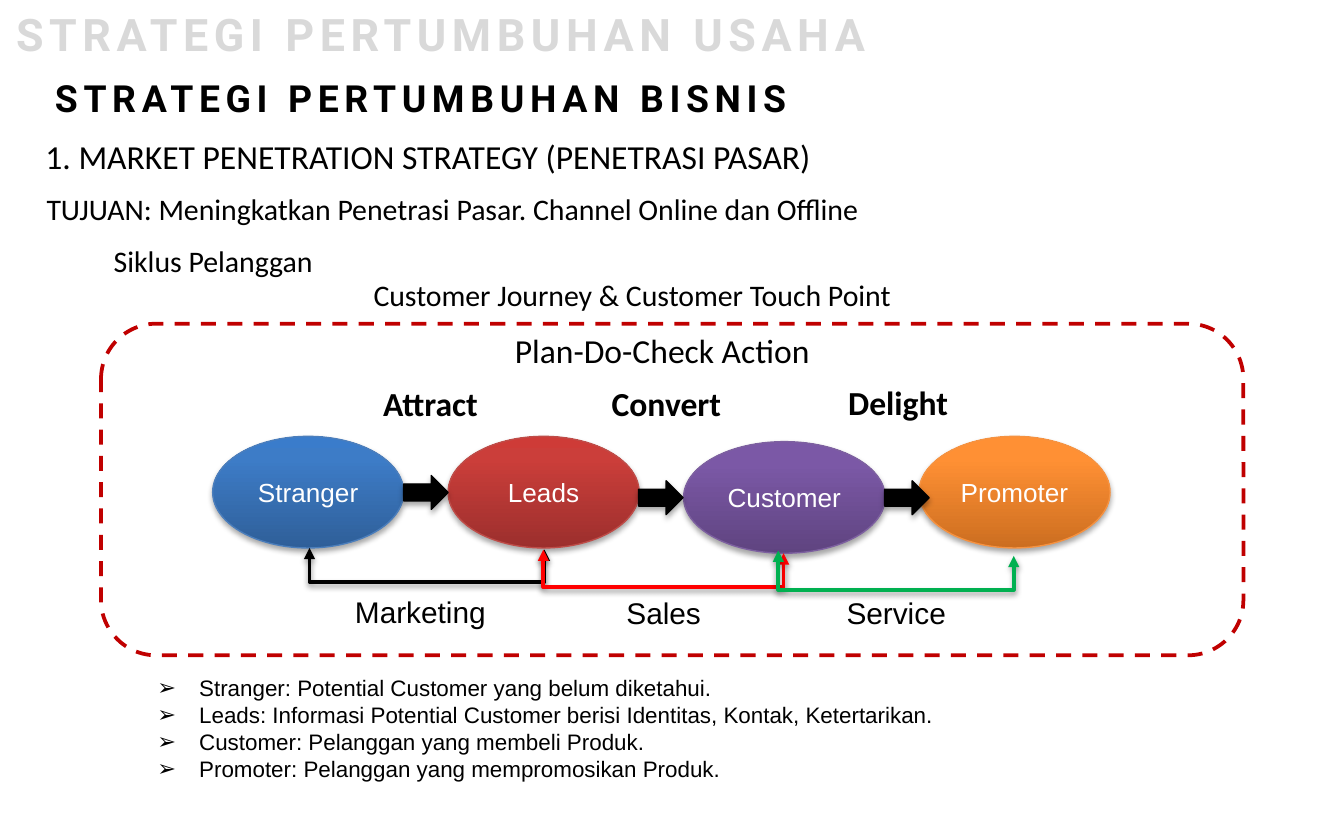
from copy import deepcopy

from lxml import etree
from pptx import Presentation
from pptx import util as u
from pptx.dml.color import RGBColor
from pptx.enum import dml, shapes, text
from pptx.oxml.ns import qn

HUES = {
    "black": "000000", "white": "FFFFFF", "grey": "D9D9D9", "frame": "C00000",
    "red": "FF0000", "green": "00B050",
}
STAGES = [
    ("Stranger", 0, 3.61, ("2F5F99", "3D7CC7", "3A7CCB"), "4B7EBC"),
    ("Leads", 0, 3.61, ("9C2F2D", "CB3E3A", "CE3B37"), "BF4C48"),
    ("Customer", 0.1, 3.81, ("5F4480", "7B58A6", "7C57A8"), "7D60A0"),
    ("Promoter", 0, 3.61, ("CC6E20", "FF9034", "FF9136"), "F69240"),
]
TERMS = [
    "Stranger: Potential Customer yang belum diketahui.",
    "Leads: Informasi Potential Customer berisi Identitas, Kontak, Ketertarikan.",
    "Customer: Pelanggan yang membeli Produk.",
    "Promoter: Pelanggan yang mempromosikan Produk.",
]


def rgb(name):
    """Turn a colour name or hex string into a colour."""
    return RGBColor.from_string(HUES.get(name, name))


def place(shape, box):
    """Move a shape to a box given in centimetres."""
    shape.left, shape.top, shape.width, shape.height = map(u.Cm, box)


def style(part, size, face="Calibri", hue="black", bold=False, gap=0):
    """Format every run of a paragraph."""
    for run in part.runs:
        font = run.font
        font.size, font.name, font.bold = u.Pt(size), face, bold
        font.color.rgb = rgb(hue)
        if gap:
            run._r.get_or_add_rPr().set("spc", str(gap * 100))


def note(slide, box, words, size, wrap=False, **look):
    """Add a text box with one formatted line."""
    shape = slide.shapes.add_textbox(*map(u.Cm, box))
    frame = shape.text_frame
    frame.text = words
    frame.word_wrap = wrap
    frame.auto_size = text.MSO_AUTO_SIZE.SHAPE_TO_FIT_TEXT
    style(frame.paragraphs[0], size, **look)


def shade(shape, dist, alpha):
    """Give a shape a soft shadow below it."""
    props = shape.element.spPr
    for old in props.findall(qn("a:effectLst")):
        props.remove(old)
    group = etree.SubElement(props, qn("a:effectLst"))
    drop = etree.SubElement(group, qn("a:outerShdw"), blurRad=str(u.Pt(3.1)),
                            dist=str(u.Pt(dist)), dir="5400000", rotWithShape="0")
    tint = etree.SubElement(drop, qn("a:srgbClr"), val=HUES["black"])
    etree.SubElement(tint, qn("a:alpha"), val=str(alpha * 1000))


def form(slide, kind, box, edge, width=0.75):
    """Add a preset shape with an outline and no shadow."""
    shape = slide.shapes.add_shape(kind, *map(u.Cm, box))
    shape.shadow.inherit = False
    shape.line.color.rgb = rgb(edge)
    shape.line.width = u.Pt(width)
    return shape


def stage(slide, box, name, tones, edge):
    """Add one shaded ellipse of the customer cycle."""
    oval = form(slide, shapes.MSO_SHAPE.OVAL, box, edge)
    oval.fill.gradient()
    oval.fill.gradient_angle = 90
    stops = oval.element.spPr.find(".//" + qn("a:gsLst"))
    stops.append(deepcopy(stops[-1]))
    for stop, tone, spot in zip(oval.fill.gradient_stops, tones, (0, 0.8, 1)):
        stop.color.rgb, stop.position = rgb(tone), spot
    shade(oval, 1.8, 35)
    frame = oval.text_frame
    frame.text = name
    frame.vertical_anchor = text.MSO_ANCHOR.MIDDLE
    frame.paragraphs[0].alignment = text.PP_ALIGN.CENTER
    style(frame.paragraphs[0], 14, "Arial", "white")


def arrow(slide, box):
    """Add one block arrow between two stages."""
    block = form(slide, shapes.MSO_SHAPE.RIGHT_ARROW, box, "black")
    block.fill.solid()
    block.fill.fore_color.rgb = rgb("black")
    shade(block, 1.8, 35)


def brace(slide, start, end, drop, hue):
    """Link two points with an elbow line that runs below them."""
    (x1, y1), (x2, y2) = start, end
    mid_x, mid_y = (x1 + x2) / 2, (y1 + y2) / 2
    wide, tall = (y2 - y1) / 2, (x2 - x1) / 2
    ends = mid_x + wide, mid_y - tall, mid_x - wide, mid_y + tall
    link = slide.shapes.add_connector(shapes.MSO_CONNECTOR.ELBOW, *map(u.Cm, ends))
    link.rotation = 270
    props = link.element.spPr
    bends = props.find(qn("a:prstGeom")).get_or_add_avLst()
    ratio = round(drop / (2 * wide) * 100000)
    etree.SubElement(bends, qn("a:gd"), name="adj1", fmla=f"val {ratio}")
    link.line.color.rgb = rgb(hue)
    link.line.width = u.Pt(2)
    for tip in ("a:headEnd", "a:tailEnd"):
        etree.SubElement(props.find(qn("a:ln")), qn(tip), type="triangle")
    shade(link, 1.6, 38)


def heads(slide, box):
    """Fill the title and the heading lines."""
    x, y, w, _ = box
    title = slide.shapes.title
    place(title, (x + 0.05, y, w, 1.27))
    frame = title.text_frame
    frame.text = "STRATEGI PERTUMBUHAN USAHA"
    frame.word_wrap = True
    frame.auto_size = text.MSO_AUTO_SIZE.SHAPE_TO_FIT_TEXT
    frame.vertical_anchor = text.MSO_ANCHOR.TOP
    frame.paragraphs[0].alignment = text.PP_ALIGN.LEFT
    style(frame.paragraphs[0], 24, "Roboto", "grey", True, 3)
    note(slide, (x + 0.79, y + 1.3, 23.93, 1.12), "STRATEGI PERTUMBUHAN BISNIS",
         20, True, face="Roboto", bold=True, gap=3)
    for dx, dy, wide, size, words in [
        (0.61, 2.44, 15.11, 18, "1. MARKET PENETRATION STRATEGY (PENETRASI PASAR)"),
        (0.63, 3.48, 16.03, 16,
         "TUJUAN: Meningkatkan Penetrasi Pasar. Channel Online dan Offline"),
        (1.9, 4.47, 4.32, 16, "Siklus Pelanggan"),
        (6.81, 5.11, 10.41, 16, "Customer Journey & Customer Touch Point"),
    ]:
        note(slide, (x + dx, y + dy, wide, 0.94), words, size)


def cycle(slide, box):
    """Draw the framed customer cycle."""
    x, y, w, _ = box
    for i, (name, dy, wide, tones, edge) in enumerate(STAGES):
        spot = x + 2.11 + i * 4.45, y + 2.13 + dy, wide, 2.11
        stage(slide, spot, name, tones, edge)
    for dx, dy in [(5.72, 2.87), (10.16, 2.97), (14.81, 2.97)]:
        arrow(slide, (x + dx, y + dy, 0.84, 0.64))
    for x1, y1, x2, y2, drop, hue in [
        (3.94, 4.24, 8.38, 4.27, 0.64, "black"),
        (8.36, 4.27, 12.9, 4.34, 0.71, "red"),
        (12.8, 4.29, 17.25, 4.39, 0.74, "green"),
    ]:
        brace(slide, (x + x1, y + y1), (x + x2, y + y2), drop, hue)
    for dx, dy, wide, words in [
        (4.55, 4.98, 3.02, "Marketing"), (9.68, 5, 1.93, "Sales"),
        (13.84, 5, 2.41, "Service"),
    ]:
        note(slide, (x + dx, y + dy, wide, 0.94), words, 16, face="Arial")
    for dx, dy, wide, words in [
        (5.08, 0.99, 2.34, "Attract"), (9.4, 0.99, 2.59, "Convert"),
        (13.87, 0.97, 2.41, "Delight"),
    ]:
        note(slide, (x + dx, y + dy, wide, 1.02), words, 18, bold=True)
    rim = form(slide, shapes.MSO_SHAPE.ROUNDED_RECTANGLE, box, "frame", 2)
    rim.fill.background()
    rim.line.dash_style = dml.MSO_LINE.DASH
    note(slide, (x + 7.57, y, 6.15, 1.02), "Plan-Do-Check Action", 18)


def terms(slide, box):
    """Fill the list that explains each stage."""
    body = slide.placeholders[1]
    place(body, box)
    frame = body.text_frame
    frame.text = "\n".join(TERMS)
    frame.word_wrap = True
    frame.auto_size = text.MSO_AUTO_SIZE.SHAPE_TO_FIT_TEXT
    for part in frame.paragraphs:
        props = part._p.get_or_add_pPr()
        props.set("marL", str(u.Cm(0.79)))
        props.set("indent", str(u.Cm(-0.79)))
        etree.SubElement(props, qn("a:buFont"), typeface="Arial")
        etree.SubElement(props, qn("a:buChar"), char="➢")
        part.space_before = u.Pt(0)
        style(part, 12, "Arial")


def main():
    """Build the slide and save it."""
    deck = Presentation()
    deck.slide_width, deck.slide_height = u.Cm(25.4), u.Cm(15.88)
    slide = deck.slides.add_slide(deck.slide_layouts[1])
    heads(slide, (0, 0, 25.4, 6.1))
    cycle(slide, (1.91, 6.12, 21.59, 6.27))
    terms(slide, (2.72, 12.62, 20.37, 2.31))
    deck.save("out.pptx")


if __name__ == "__main__":
    main()
